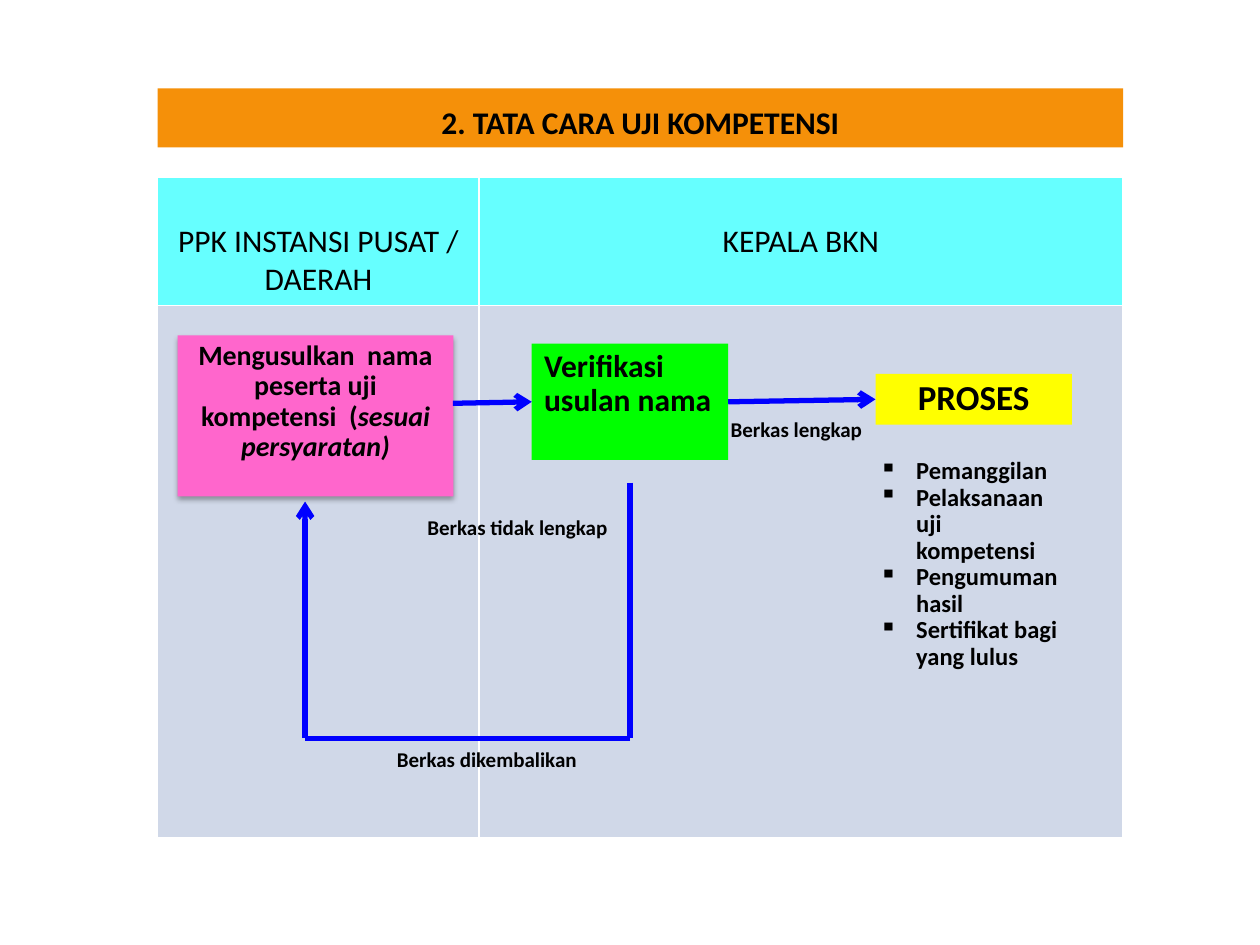
"""Build the competency test procedure slide with python-pptx."""
from itertools import pairwise

from lxml.etree import SubElement
from pptx import Presentation
from pptx.dml.color import RGBColor
from pptx.enum.shapes import MSO_CONNECTOR as Connector, MSO_SHAPE as Shape
from pptx.enum.text import MSO_ANCHOR as Anchor, MSO_AUTO_SIZE as AutoSize, PP_ALIGN as Align
from pptx.oxml import parse_xml
from pptx.oxml.ns import nsdecls, qn
from pptx.util import Cm, Pt

FONT, BLACK, WHITE, BLUE = "Calibri", "000000", "FFFFFF", "0000FF"
TITLE = "2. TATA CARA UJI KOMPETENSI"
TITLE_AREA = (3.18, 1.78, 19.46, 1.19)
HEADERS = ["PPK INSTANSI PUSAT / DAERAH", "KEPALA BKN"]
TABLE_CORNER = (3.18, 3.58)
COLUMNS = [6.48, 12.97]
ROWS = [2.57, 10.72]
ROW_FILLS = ["66FFFF", "D0D8E8"]
STEPS = [
    ([("Mengusulkan  nama peserta uji kompetensi  (", False), ("sesuai persyaratan)", True)],
     (3.58, 6.76, 5.56, 3.25), "FF66CC", 16, Align.CENTER, True),
    ([("Verifikasi usulan nama", False)],
     (10.72, 6.93, 3.96, 2.34), "00FF00", 18, Align.JUSTIFY, False),
    ([("PROSES", False)],
     (17.65, 7.54, 3.96, 1.02), "FFFF00", 20, Align.CENTER, False),
]
PROCESS = ["Pemanggilan", "Pelaksanaan uji kompetensi", "Pengumuman hasil",
           "Sertifikat bagi yang lulus"]
PROCESS_AREA = (17.48, 9.12, 4.17, 4.57)
ROUTES = [
    [(9.13, 8.13), (10.72, 8.1)],
    [(14.68, 8.1), (17.65, 8.05)],
    [(12.7, 9.73), (12.7, 14.88), (6.15, 14.88), (6.15, 10.11)],
]
LABELS = [
    ("Berkas lengkap", (14.48, 8.33, 3.76, 0.71), Align.LEFT),
    ("Berkas tidak lengkap", (8.13, 10.31, 4.37, 0.71), Align.RIGHT),
    ("Berkas dikembalikan", (7.75, 14.99, 4.17, 0.71), Align.LEFT),
]


def color(value):
    return RGBColor.from_string(value)


def lengths(values):
    return [Cm(value) for value in values]


def paint(shape, fill):
    shape.fill.solid()
    shape.fill.fore_color.rgb = color(fill)


def write(frame, paragraphs, size=18, bold=True, align=Align.LEFT, spacing=0.9,
          anchor=Anchor.TOP, bullet=None):
    frame.word_wrap = True
    frame.vertical_anchor = anchor
    for index, spans in enumerate(paragraphs):
        para = frame.add_paragraph() if index else frame.paragraphs[0]
        para.alignment, para.line_spacing = align, spacing
        if bullet:
            properties = para._p.get_or_add_pPr()
            properties.set("marL", str(Cm(0.74)))
            properties.set("indent", str(-Cm(0.74)))
            SubElement(properties, qn("a:buChar"), char=bullet)
        for text, italic in spans:
            span = para.add_run()
            span.text = text
            font = span.font
            font.name, font.size, font.bold, font.italic = FONT, Pt(size), bold, italic
            font.color.rgb = color(BLACK)


def add_text(page, area, paragraphs, **style):
    box = page.shapes.add_textbox(*lengths(area))
    write(box.text_frame, paragraphs, **style)


def add_title(page):
    title = page.shapes.title
    title.left, title.top, title.width, title.height = lengths(TITLE_AREA)
    paint(title, "F59009")
    title.text_frame.auto_size = AutoSize.NONE
    write(title.text_frame, [[(TITLE, False)]], align=Align.CENTER, anchor=Anchor.BOTTOM)


def add_borders(cell, bottom):
    properties = cell._tc.get_or_add_tcPr()
    sides = {"lnL": 1, "lnR": 1, "lnT": 1, "lnB": bottom}
    for index, (side, width) in enumerate(sides.items()):
        properties.insert(index, parse_xml(
            f'<a:{side} {nsdecls("a")} w="{Pt(width)}"><a:solidFill>'
            f'<a:srgbClr val="{WHITE}"/></a:solidFill></a:{side}>'))


def add_lanes(page):
    size = (sum(COLUMNS), sum(ROWS))
    table = page.shapes.add_table(len(ROWS), len(COLUMNS), *lengths(TABLE_CORNER + size)).table
    for column, width in zip(table.columns, COLUMNS):
        column.width = Cm(width)
    for number, (row, height) in enumerate(zip(table.rows, ROWS)):
        row.height = Cm(height)
        for cell, header in zip(row.cells, HEADERS):
            paint(cell, ROW_FILLS[number])
            add_borders(cell, bottom=1)
            if number == 0:
                cell.margin_top = Cm(0.9)
                write(cell.text_frame, [[(header, False)]], bold=False,
                      align=Align.CENTER, spacing=1.0)


def add_step(page, spans, area, fill, size, align, shadow):
    box = page.shapes.add_shape(Shape.RECTANGLE, *lengths(area))
    box.shadow.inherit = False
    paint(box, fill)
    box.line.fill.background()
    write(box.text_frame, [spans], size=size, align=align)
    if shadow:
        effects = box._element.spPr.find(qn("a:effectLst"))
        effects.append(parse_xml(
            f'<a:outerShdw {nsdecls("a")} blurRad="{Pt(3.1)}" dist="{Pt(1.8)}" dir="5400000" '
            f'rotWithShape="0"><a:srgbClr val="{BLACK}"><a:alpha val="35000"/></a:srgbClr>'
            '</a:outerShdw>'))


def add_route(page, points):
    for start, end in pairwise(points):
        link = page.shapes.add_connector(Connector.STRAIGHT, *lengths(start + end))
        link.line.color.rgb = color(BLUE)
        link.line.width = Pt(3)
        if end == points[-1]:
            SubElement(link.line._get_or_add_ln(), qn("a:tailEnd"), type="arrow")
        SubElement(link._element.spPr, qn("a:effectLst"))


def main():
    deck = Presentation()
    deck.slide_width, deck.slide_height = lengths((25.4, 19.05))
    page = deck.slides.add_slide(deck.slide_layouts[5])
    add_title(page)
    add_lanes(page)
    for step in STEPS:
        add_step(page, *step)
    add_text(page, PROCESS_AREA, [[(item, False)] for item in PROCESS], size=14, bullet="▪")
    for points in ROUTES:
        add_route(page, points)
    for text, area, align in LABELS:
        add_text(page, area, [[(text, False)]], size=12, align=align)
    deck.save("out.pptx")


if __name__ == "__main__":
    main()
